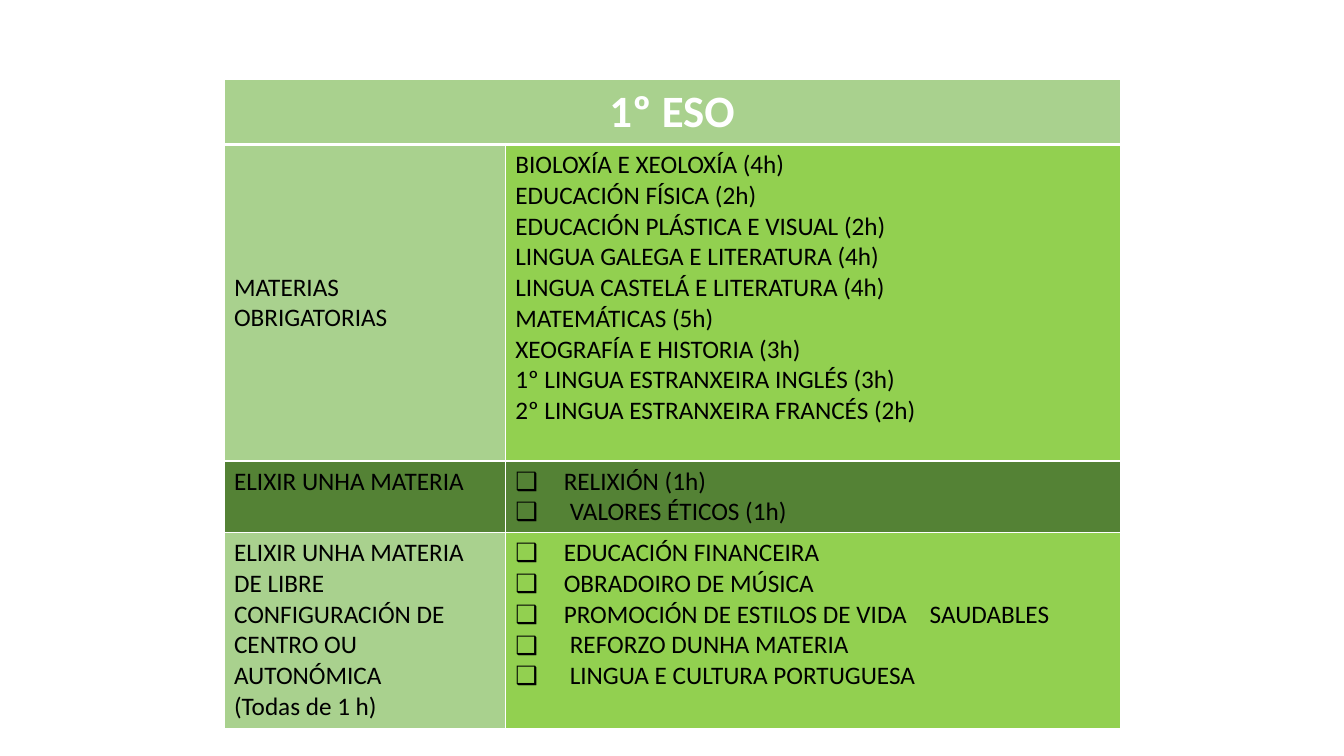
from pptx import Presentation
from pptx.dml.color import RGBColor
from pptx.enum.text import MSO_ANCHOR as Anchor, PP_ALIGN as Align
from pptx.oxml import parse_xml
from pptx.oxml.ns import nsdecls
from pptx.util import Inches, Pt

WIDTH, HEIGHT = 13.33, 7.5
COLUMN_WIDTHS = [2.79, 6.1]
ROW_HEIGHTS = [0.64, 3.14, 0.71, 1.94]
PALE, BRIGHT, DARK = "A9D18E", "92D050", "548235"
BODY = {"name": "Calibri", "size": Pt(18), "bold": False, "color": "000000"}
HEADING = {"name": "Calibri", "size": Pt(32), "bold": True, "color": "FFFFFF"}
NARROW, WIDE = 0.48, 0.54

REQUIRED = [
    "BIOLOXÍA E XEOLOXÍA (4h)",
    "EDUCACIÓN FÍSICA (2h)",
    "EDUCACIÓN PLÁSTICA E VISUAL (2h)",
    "LINGUA GALEGA E LITERATURA (4h)",
    "LINGUA CASTELÁ E LITERATURA (4h)",
    "MATEMÁTICAS (5h)",
    "XEOGRAFÍA E HISTORIA (3h)",
    "1º LINGUA ESTRANXEIRA INGLÉS (3h)",
    "2º LINGUA ESTRANXEIRA FRANCÉS (2h)",
]
ETHICS = [("RELIXIÓN (1h)", NARROW), ("VALORES ÉTICOS (1h)", WIDE)]
ELECTIVES = [
    ("EDUCACIÓN FINANCEIRA", NARROW),
    ("OBRADOIRO DE MÚSICA", NARROW),
    ("PROMOCIÓN DE ESTILOS DE VIDA\tSAUDABLES", NARROW),
    ("REFORZO DUNHA MATERIA", WIDE),
    ("LINGUA E CULTURA PORTUGUESA", WIDE),
]
FREE_CHOICE = [
    "ELIXIR UNHA MATERIA DE LIBRE CONFIGURACIÓN DE CENTRO OU AUTONÓMICA",
    "(Todas de 1 h)",
]


def color(value):
    return RGBColor.from_string(value)


def set_font(paragraph, style):
    for name, value in style.items():
        if name == "color":
            paragraph.font.color.rgb = color(value)
            for run in paragraph.runs:
                run.font.color.rgb = color(value)
        else:
            setattr(paragraph.font, name, value)
            for run in paragraph.runs:
                setattr(run.font, name, value)


def add_bullet(paragraph, indent):
    properties = paragraph._p.get_or_add_pPr()
    properties.set("marL", str(Inches(indent)))
    properties.set("indent", str(-Inches(indent)))
    tab = f'<a:tab pos="{Inches(4.11)}" algn="l"/>' if "\t" in paragraph.text else ""
    parts = ['<a:buFont {} typeface="Arial"/>', '<a:buChar {} char="❑"/>']
    if tab:
        parts.append("<a:tabLst {}>" + tab + "</a:tabLst>")
    for part in parts:
        properties.append(parse_xml(part.format(nsdecls("a"))))


def set_borders(cell, top, bottom):
    properties = cell._tc.get_or_add_tcPr()
    widths = {"lnL": 1, "lnR": 1, "lnT": top, "lnB": bottom}
    for position, (side, width) in enumerate(widths.items()):
        properties.insert(position, parse_xml(
            f'<a:{side} {nsdecls("a")} w="{Pt(width)}"><a:solidFill>'
            f'<a:srgbClr val="FFFFFF"/></a:solidFill></a:{side}>'))


def fill_cell(cell, fill, items, style=BODY, align=Align.LEFT, anchor=Anchor.TOP):
    cell.fill.solid()
    cell.fill.fore_color.rgb = color(fill)
    cell.vertical_anchor = anchor
    frame = cell.text_frame
    for index, item in enumerate(items):
        text, indent = (item, 0) if isinstance(item, str) else item
        paragraph = frame.add_paragraph() if index else frame.paragraphs[0]
        paragraph.text = text
        paragraph.alignment = align
        if indent:
            add_bullet(paragraph, indent)
        set_font(paragraph, style)


def add_subject_table(slide):
    table = slide.shapes.add_table(
        len(ROW_HEIGHTS), len(COLUMN_WIDTHS),
        Inches(WIDTH / 6), Inches(0.79),
        Inches(sum(COLUMN_WIDTHS)), Inches(sum(ROW_HEIGHTS))).table
    for column, width in zip(table.columns, COLUMN_WIDTHS):
        column.width = Inches(width)
    for index, (row, height) in enumerate(zip(table.rows, ROW_HEIGHTS)):
        row.height = Inches(height)
        for cell in row.cells:
            set_borders(cell, 3 if index == 1 else 1, 3 if index == 0 else 1)
    table.cell(0, 0).merge(table.cell(0, 1))
    return table


def main():
    presentation = Presentation()
    presentation.slide_width = Inches(WIDTH)
    presentation.slide_height = Inches(HEIGHT)
    slide = presentation.slides.add_slide(presentation.slide_layouts[6])
    table = add_subject_table(slide)
    fill_cell(table.cell(0, 0), PALE, ["1º ESO"], HEADING, Align.CENTER)
    fill_cell(table.cell(1, 0), PALE, ["MATERIAS OBRIGATORIAS"], anchor=Anchor.MIDDLE)
    fill_cell(table.cell(1, 1), BRIGHT, REQUIRED)
    fill_cell(table.cell(2, 0), DARK, ["ELIXIR UNHA MATERIA"])
    fill_cell(table.cell(2, 1), DARK, ETHICS)
    fill_cell(table.cell(3, 0), PALE, FREE_CHOICE)
    fill_cell(table.cell(3, 1), BRIGHT, ELECTIVES)
    presentation.save("out.pptx")


if __name__ == "__main__":
    main()
